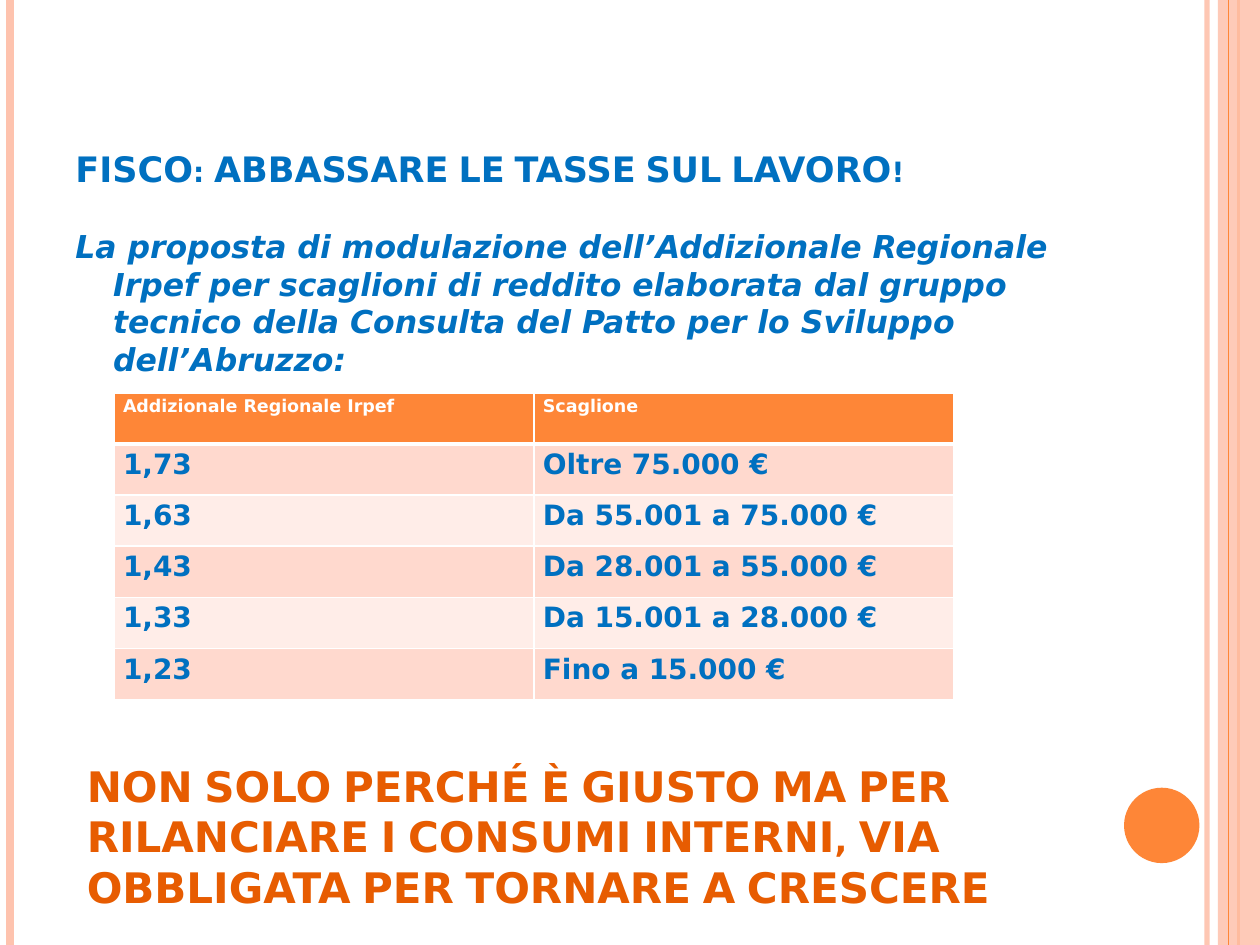
from lxml import etree
from pptx import Presentation, util as u
from pptx.dml.color import RGBColor
from pptx.enum import shapes, text
from pptx.oxml.ns import qn

FONT = "DejaVu Sans"
ORANGE, PEACH, BLUE, WHITE = "FE8637", "FEC3AE", "0070C0", "FFFFFF"
BANDS = ["FFD9CE", "FFEDE8"]
SLIDE_W, SLIDE_H = 25.4, 19.05

BRACKETS = [
    ("Addizionale Regionale Irpef", "Scaglione"),
    ("1,73", "Oltre 75.000 €"),
    ("1,63", "Da 55.001 a 75.000 €"),
    ("1,43", "Da 28.001 a 55.000 €"),
    ("1,33", "Da 15.001 a 28.000 €"),
    ("1,23", "Fino a 15.000 €"),
]


def paint(color_format, color, opacity=None):
    """Set a solid fill to a hex colour, with opacity in percent."""
    color_format.solid()
    color_format.fore_color.rgb = RGBColor.from_string(color)
    if opacity is not None:
        srgb = color_format.fore_color._xFill.find(qn("a:srgbClr"))
        etree.SubElement(srgb, qn("a:alpha"), val=str(opacity * 1000))


def add_stripe(slide, x, color, width, opacity=None):
    stripe = slide.shapes.add_connector(
        shapes.MSO_CONNECTOR.STRAIGHT, u.Cm(x), 0, u.Cm(x), u.Cm(SLIDE_H))
    stripe.line.width = u.Pt(width)
    paint(stripe.line.fill, color, opacity)
    etree.SubElement(stripe._element.spPr, qn("a:effectLst"))


def add_filled(slide, preset, x, y, w, h, color, opacity=None):
    shape = slide.shapes.add_shape(preset, u.Cm(x), u.Cm(y), u.Cm(w), u.Cm(h))
    shape.shadow.inherit = False
    paint(shape.fill, color, opacity)
    shape.line.fill.background()


def write(frame, words, size, color, italic=None, small_caps=False,
          align=None, line_spacing=None, space_before=None, hanging=0):
    paragraph = frame.paragraphs[0]
    paragraph.alignment = align
    paragraph.line_spacing = line_spacing
    if space_before is not None:
        paragraph.space_before = u.Pt(space_before)
    if hanging:
        properties = paragraph._p.get_or_add_pPr()
        properties.set("marL", str(u.Cm(hanging)))
        properties.set("indent", str(-u.Cm(hanging)))
    run = paragraph.add_run()
    run.text = words
    run.font.name = FONT
    run.font.size = u.Pt(size)
    run.font.bold = True
    run.font.italic = italic
    paint(run.font.fill, color)
    if small_caps:
        run._r.get_or_add_rPr().set("cap", "small")


def add_text(slide, x, y, w, h, words, anchor=text.MSO_ANCHOR.TOP, **style):
    frame = slide.shapes.add_textbox(
        u.Cm(x), u.Cm(y), u.Cm(w), u.Cm(h)).text_frame
    frame.word_wrap = True
    frame.vertical_anchor = anchor
    write(frame, words, **style)


def set_borders(cell, color, **widths):
    """Draw the sides L, R, T and B in the given widths in points."""
    properties = cell._tc.get_or_add_tcPr()
    for place, side in enumerate("LRTB"):
        line = etree.Element(qn(f"a:ln{side}"), w=str(u.Pt(widths[side])))
        fill = etree.SubElement(line, qn("a:solidFill"))
        etree.SubElement(fill, qn("a:srgbClr"), val=color)
        properties.insert(place, line)


def add_bracket_table(slide, x, y, w, h):
    table = slide.shapes.add_table(
        len(BRACKETS), 2, u.Cm(x), u.Cm(y), u.Cm(w), u.Cm(h)).table
    for r, row in enumerate(BRACKETS):
        header = r == 0
        for c, words in enumerate(row):
            cell = table.cell(r, c)
            cell.margin_left = cell.margin_right = u.Cm(0.18)
            cell.margin_top = cell.margin_bottom = 0
            paint(cell.fill, ORANGE if header else BANDS[(r - 1) % 2])
            set_borders(cell, WHITE, L=1, R=1,
                        T=3 if r == 1 else 1, B=3 if header else 1)
            write(cell.text_frame, words, size=10 if header else 16,
                  color=WHITE if header else BLUE,
                  align=text.PP_ALIGN.JUSTIFY, line_spacing=1.15)


def add_decoration(slide):
    add_stripe(slide, 24.33, PEACH, 3, opacity=93)
    add_stripe(slide, 0.21, PEACH, 4.5)
    add_stripe(slide, 24.97, ORANGE, 1.5)
    add_filled(slide, shapes.MSO_SHAPE.RECTANGLE,
               24.55, 0, SLIDE_W - 24.55, SLIDE_H, PEACH, opacity=87)
    add_stripe(slide, 24.77, ORANGE, 0.75)
    add_filled(slide, shapes.MSO_SHAPE.OVAL, 22.66, 15.88, 1.52, 1.52, ORANGE)


def main():
    deck = Presentation()
    deck.slide_width, deck.slide_height = u.Cm(SLIDE_W), u.Cm(SLIDE_H)
    slide = deck.slides.add_slide(deck.slide_layouts[6])
    add_decoration(slide)
    add_text(slide, 1.27, 0.76, 20.75, 3.18,
             "FISCO: ABBASSARE LE TASSE SUL LAVORO!",
             anchor=text.MSO_ANCHOR.BOTTOM, size=20, color=BLUE,
             small_caps=True)
    add_text(slide, 1.27, 4.45, 20.75, 10.29,
             "La proposta di modulazione dell’Addizionale Regionale Irpef per "
             "scaglioni di reddito elaborata dal gruppo tecnico della Consulta "
             "del Patto per lo Sviluppo dell’Abruzzo:",
             size=18, color=BLUE, italic=True, space_before=6, hanging=0.76)
    add_text(slide, 1.5, 15.32, 20.75, 3.18,
             "NON SOLO PERCHÉ È GIUSTO MA PER RILANCIARE I CONSUMI INTERNI, "
             "VIA OBBLIGATA PER TORNARE A CRESCERE",
             anchor=text.MSO_ANCHOR.BOTTOM, size=24, color="E75C01",
             small_caps=True)
    add_bracket_table(slide, 2.3, 7.92, 16.93, 6.18)
    deck.save("out.pptx")


if __name__ == "__main__":
    main()
